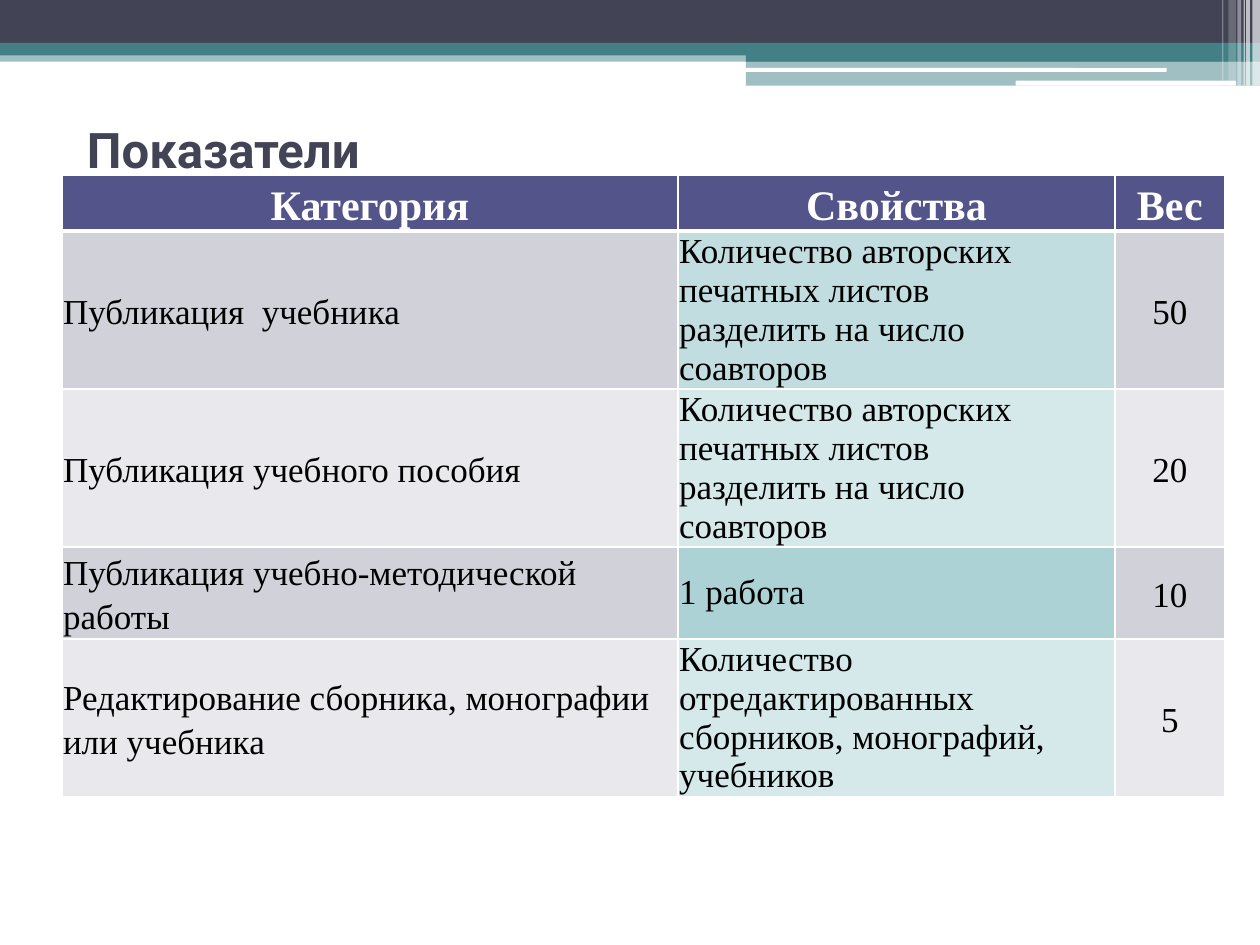
from lxml.etree import SubElement
from pptx import Presentation
from pptx.dml.color import RGBColor
from pptx.enum.shapes import MSO_SHAPE
from pptx.enum.text import MSO_ANCHOR, PP_ALIGN
from pptx.oxml import parse_xml
from pptx.oxml.ns import nsdecls, qn
from pptx.util import Inches, Pt

THEME = {
    "dark": "424456", "teal": "438086", "white": "FFFFFF", "black": "000000",
    "header": "53548A", "band": ("D1D1DA", "E9E9ED"), "accent": ("ADD2D6", "D6E9EA"),
    "title_font": "Roboto", "table_font": "Times New Roman",
    "title_size": 28, "header_size": 24, "cell_size": 20,
    "line_spacing": 1.15, "rule": 1, "header_rule": 3,
}

TITLE = "Показатели"
HEADERS = ("Категория", "Свойства", "Вес")
SHEETS = ("Количество авторских печатных листов", "разделить на число соавторов")
# category, paragraphs of properties, weight
INDICATORS = [
    ("Публикация  учебника", SHEETS, "50"),
    ("Публикация учебного пособия", SHEETS, "20"),
    ("Публикация учебно-методической работы", ("1 работа",), "10"),
    ("Редактирование сборника, монографии или учебника",
     ("Количество отредактированных сборников, монографий, учебников",), "5"),
]
COLUMN_WIDTHS = (4.89, 3.47, 0.87)
ROW_HEIGHTS = (0.43, 1.25, 1.25, 0.73, 1.25)

# left, top, width, height, colour, opacity in percent
BANDS = [
    (0, 0.4, 10, 0.09, "teal", 50),
    (0, 0, 10, 0.34, "dark", 100),
    (0, 0.34, 10, 0.1, "teal", 100),
    (0, 0.44, 10, 0, "teal", 100),
    (5.92, 0.39, 4.08, 0.1, "teal", 100),
    (5.92, 0.48, 4.08, 0.2, "teal", 50),
]
BANDS = [band for band in BANDS if band[3]]
ROUNDED_BARS = [
    (5.91, 0.54, 3.35, 0.03, "white", 100),
    (8.06, 0.64, 1.75, 0.04, "white", 100),
]
# left, width, height, opacity of the stripes at the right edge
STRIPES = [
    (9.94, 0.06, 0.68, 65), (9.89, 0.03, 0.68, 65), (9.87, 0.01, 0.68, 60),
    (9.82, 0.03, 0.68, 40), (9.75, 0.06, 0.64, 20), (9.7, 0.01, 0.64, 30),
]


def paint(fill, color, opacity=100):
    fill.solid()
    fill.fore_color.rgb = RGBColor.from_string(color)
    if opacity < 100:
        # The fill element is reached through the colour it holds.
        rgb = fill._xPr.find(qn("a:solidFill")).find(qn("a:srgbClr"))
        SubElement(rgb, qn("a:alpha")).set("val", str(opacity * 1000))


def add_bar(slide, kind, left, top, width, height, color, opacity):
    bar = slide.shapes.add_shape(
        kind, Inches(left), Inches(top), Inches(width), Inches(height))
    bar.shadow.inherit = False
    bar.line.fill.background()
    paint(bar.fill, THEME[color], opacity)


def add_decoration(slide):
    for band in BANDS:
        add_bar(slide, MSO_SHAPE.RECTANGLE, *band)
    for bar in ROUNDED_BARS:
        add_bar(slide, MSO_SHAPE.ROUNDED_RECTANGLE, *bar)
    for left, width, height, opacity in STRIPES:
        add_bar(slide, MSO_SHAPE.RECTANGLE, left, 0, width, height, "white", opacity)


def set_font(font, name, size, color, bold):
    font.name, font.size, font.bold = name, Pt(size), bold
    font.color.rgb = RGBColor.from_string(color)


def place_title(slide):
    title = slide.shapes.title
    title.left, title.top = Inches(0.59), Inches(0.6)
    title.width, title.height = Inches(9), Inches(1.17)
    frame = title.text_frame
    frame.text = TITLE
    frame.vertical_anchor = MSO_ANCHOR.MIDDLE
    paragraph = frame.paragraphs[0]
    paragraph.alignment = PP_ALIGN.LEFT
    set_font(paragraph.font, THEME["title_font"], THEME["title_size"], THEME["dark"], True)


def set_borders(cell, row):
    rule, header_rule = THEME["rule"], THEME["header_rule"]
    widths = {"lnL": rule, "lnR": rule,
              "lnT": header_rule if row == 1 else rule,
              "lnB": header_rule if row == 0 else rule}
    properties = cell._tc.get_or_add_tcPr()
    for position, (side, width) in enumerate(widths.items()):
        properties.insert(position, parse_xml(
            f'<a:{side} {nsdecls("a")} w="{Pt(width)}"><a:solidFill>'
            f'<a:srgbClr val="{THEME["white"]}"/></a:solidFill></a:{side}>'))


def fill_cell(cell, row, column, lines):
    is_header, is_property = row == 0, row > 0 and column == 1
    cell.vertical_anchor = MSO_ANCHOR.MIDDLE
    cell.margin_left = cell.margin_right = Inches(0.01)
    cell.margin_top = cell.margin_bottom = Inches(0.01)
    cell.text = "\n".join(lines)
    for paragraph in cell.text_frame.paragraphs:
        centred = is_header or column == 2
        paragraph.alignment = PP_ALIGN.CENTER if centred else PP_ALIGN.LEFT
        if not is_property:
            paragraph.line_spacing = THEME["line_spacing"]
        set_font(paragraph.font, THEME["table_font"],
                 THEME["header_size" if is_header else "cell_size"],
                 THEME["white" if is_header else "black"], is_header)
    if is_header:
        paint(cell.fill, THEME["header"])
    else:
        shades = THEME["accent" if is_property else "band"]
        paint(cell.fill, shades[(row - 1) % 2], 74 if is_property and row == 1 else 100)
    set_borders(cell, row)


def add_indicator_table(slide):
    rows = [[(header,) for header in HEADERS]]
    rows += [[(category,), properties, (weight,)]
             for category, properties, weight in INDICATORS]
    table = slide.shapes.add_table(
        len(rows), len(HEADERS), Inches(0.49), Inches(1.39),
        Inches(sum(COLUMN_WIDTHS)), Inches(sum(ROW_HEIGHTS))).table
    for column, width in zip(table.columns, COLUMN_WIDTHS):
        column.width = Inches(width)
    for table_row, height in zip(table.rows, ROW_HEIGHTS):
        table_row.height = Inches(height)
    for row, contents in enumerate(rows):
        for column, lines in enumerate(contents):
            fill_cell(table.cell(row, column), row, column, lines)


def main():
    deck = Presentation()
    deck.slide_width, deck.slide_height = Inches(10), Inches(7.5)
    slide = deck.slides.add_slide(deck.slide_layouts[5])
    place_title(slide)
    add_decoration(slide)
    # The title lies above the decoration and below the table.
    title = slide.shapes.title.element
    title.getparent().append(title)
    add_indicator_table(slide)
    deck.save("out.pptx")


if __name__ == "__main__":
    main()
